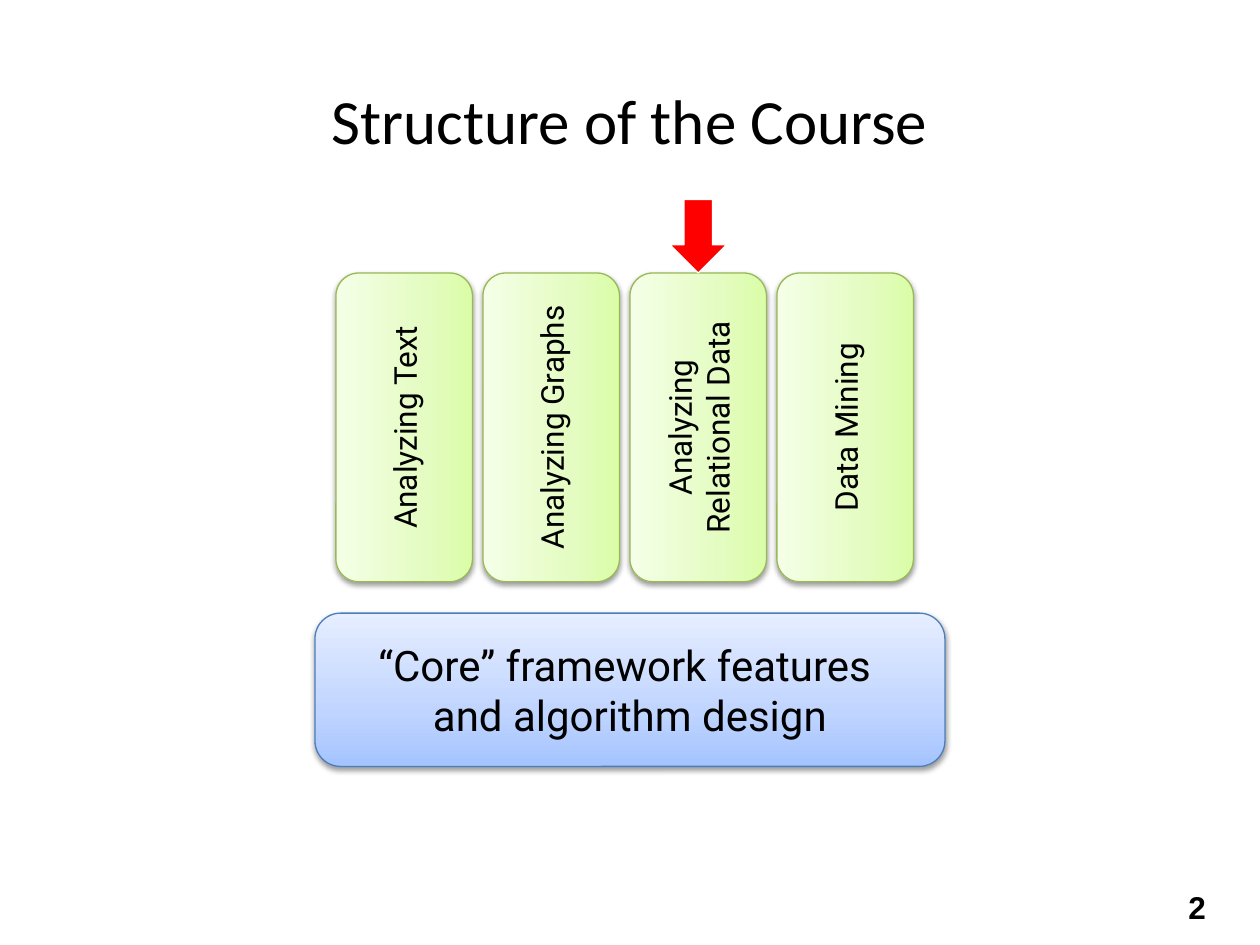
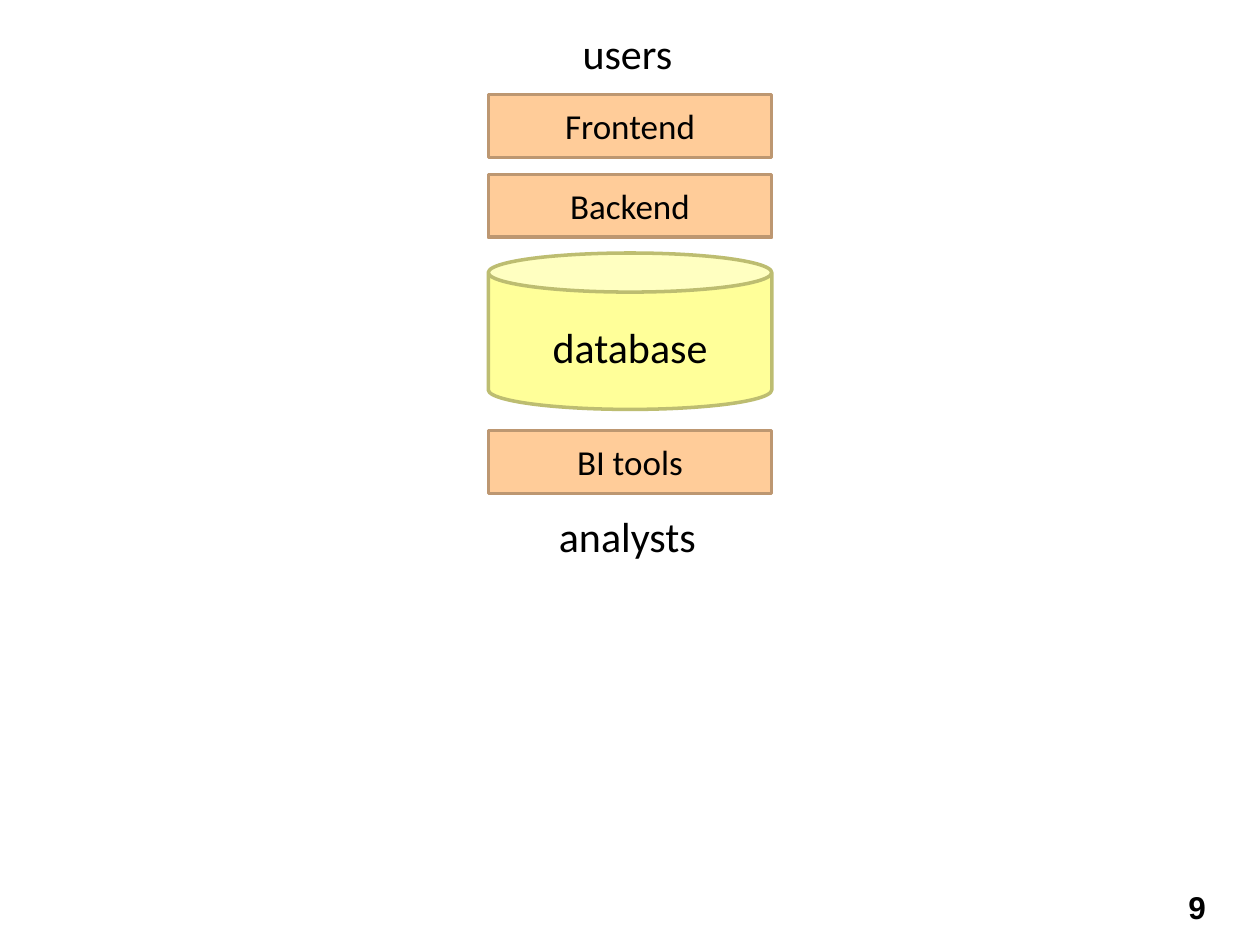
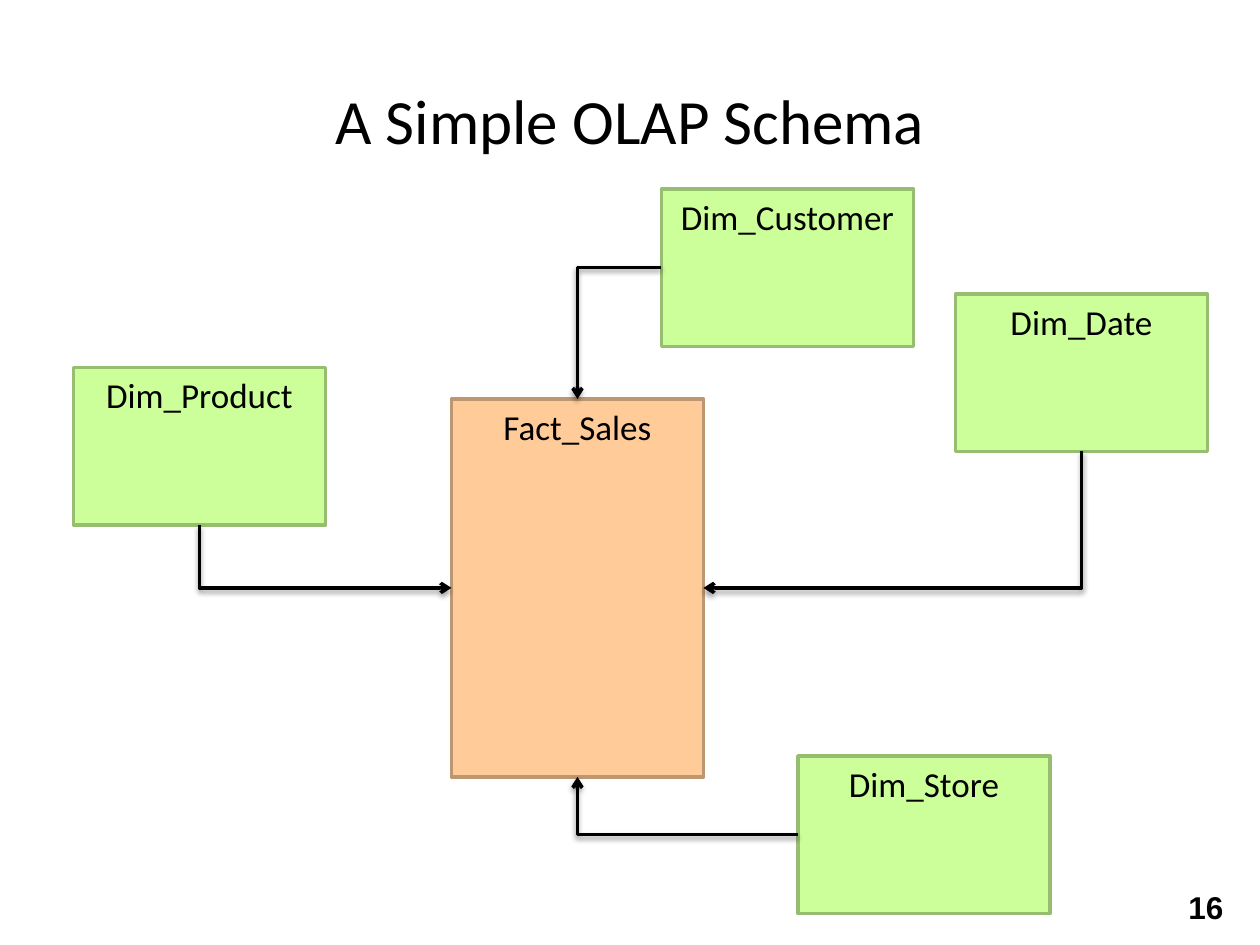
from lxml import etree
from pptx import Presentation
from pptx.dml.color import RGBColor
from pptx.enum.shapes import MSO_CONNECTOR, MSO_SHAPE
from pptx.enum.text import MSO_ANCHOR, PP_ALIGN
from pptx.oxml.ns import qn
from pptx.util import Pt

RECT, ROUND = MSO_SHAPE.RECTANGLE, MSO_SHAPE.ROUNDED_RECTANGLE
CAN, ARROW = MSO_SHAPE.CAN, MSO_SHAPE.DOWN_ARROW
ELBOW = MSO_CONNECTOR.ELBOW
TOP, MIDDLE = MSO_ANCHOR.TOP, MSO_ANCHOR.MIDDLE
LEFT, CENTER = PP_ALIGN.LEFT, PP_ALIGN.CENTER
NORTH, WEST, SOUTH, EAST = range(4)

SCALE = 7620
BLACK = "000000"
ORANGE = ("FFCC99", "BD9771")
YELLOW = ("FFFF99", "BDBD71")
GREEN = ("CCFF99", "97BD71")
RED = ("FF0000", "FFFFFF")
BLUE_FADE = (("A4C4FF", "BFD4FF", "E6EEFF"), "4B7EBC")
GREEN_FADE = (("DAFDA7", "E4FCC2", "F5FFE7"), "98B955")
STOPS = (0, 35000, 100000)

TITLE = {"name": "Calibri", "size": Pt(36)}
LABEL = {"name": "Calibri", "size": Pt(24)}
BOX = {"name": "Calibri", "size": Pt(20)}
CORE = {"name": "Roboto", "size": Pt(24)}
PILLAR = {"name": "Roboto", "size": Pt(18)}
NUMBER = {"name": "Arial", "size": Pt(18), "bold": True}


def px(*sizes):
    """Turn px lengths into EMU."""
    return [size * SCALE for size in sizes]


def color(code):
    """Turn a hex string into a colour."""
    return RGBColor.from_string(code)


def assign(item, values):
    """Set attributes from a dict."""
    for key, value in values.items():
        setattr(item, key, value)


def write(shape, text, style, align=CENTER, anchor=TOP):
    """Put styled text into a shape."""
    frame = shape.text_frame
    frame.text = text
    assign(frame, {"word_wrap": True, "vertical_anchor": anchor})
    for para in frame.paragraphs:
        para.alignment = align
        for run in para.runs:
            assign(run.font, style)
            run.font.color.rgb = color(BLACK)


def label(slide, area, text, style, align=CENTER):
    """Add a text box."""
    write(slide.shapes.add_textbox(*px(*area)), text, style, align)


def outline(shape, code, width):
    """Set the line of a shape or connector."""
    shape.line.color.rgb = color(code)
    shape.line.width = Pt(width)


def shade(shape, soft):
    """Replace the theme shadow by a soft one or by none."""
    effects = etree.SubElement(shape._element.spPr, qn("a:effectLst"))
    if soft:
        cast = etree.SubElement(effects, qn("a:outerShdw"), blurRad="40000",
                                dist="20000", dir="5400000", rotWithShape="0")
        tone = etree.SubElement(cast, qn("a:srgbClr"), val=BLACK)
        etree.SubElement(tone, qn("a:alpha"), val="38000")


def fade(shape, codes):
    """Fill a shape with a gradient that rises from its bottom."""
    shape.fill.gradient()
    shape.fill.gradient_angle = 90
    stops = shape._element.spPr.find(".//" + qn("a:gsLst"))
    stops.clear()
    for pos, code in zip(STOPS, codes):
        stop = etree.SubElement(stops, qn("a:gs"), pos=str(pos))
        etree.SubElement(stop, qn("a:srgbClr"), val=code)


def block(slide, kind, area, paint, width=2):
    """Add a flat filled shape."""
    shape = slide.shapes.add_shape(kind, *px(*area))
    shape.fill.solid()
    shape.fill.fore_color.rgb = color(paint[0])
    outline(shape, paint[1], width)
    shade(shape, False)
    return shape


def box(slide, area, text, paint, anchor=TOP):
    """Add a flat box with its name."""
    shape = block(slide, RECT, area, paint)
    write(shape, text, BOX, anchor=anchor)
    return shape


def panel(slide, area, text, paint, style, turn=0):
    """Add a rounded gradient panel with a shadow."""
    shape = slide.shapes.add_shape(ROUND, *px(*area))
    shape.rotation = turn
    fade(shape, paint[0])
    outline(shape, paint[1], 0.75)
    shade(shape, True)
    write(shape, text, style, anchor=MIDDLE)


def link(slide, start, exit, end, entry, tip):
    """Join two boxes by one bend, level part first."""
    wire = slide.shapes.add_connector(ELBOW, 0, 0, 0, 0)
    wire.begin_connect(start, exit)
    wire.end_connect(end, entry)
    wire._element.spPr.find(qn("a:prstGeom")).set("prst", "bentConnector2")
    outline(wire, BLACK, 2)
    etree.SubElement(wire.line._get_or_add_ln(), qn(tip), type="arrow")
    shade(wire, True)


def page(deck, number, title=None):
    """Add a slide with its number and title."""
    slide = deck.slides.add_slide(deck.slide_layouts[6])
    if title:
        label(slide, (0, 72, 1200, 90), title, TITLE)
    label(slide, (1120, 840, 70, 48), number, NUMBER, LEFT)
    return slide


def course(deck):
    """Draw the course pillars on their base."""
    slide = page(deck, "2", "Structure of the Course")
    panel(slide, (300, 584, 600, 146),
          "“Core” framework features \vand algorithm design", BLUE_FADE, CORE)
    topics = ("Analyzing Text", "Analyzing Graphs",
              "Analyzing Relational Data", "Data Mining")
    for i, topic in enumerate(topics):
        panel(slide, (238 + 140 * i, 342, 294, 130), topic,
              GREEN_FADE, PILLAR, 270)
    block(slide, ARROW, (638, 190, 54, 70), RED, 0.75)


def stack(deck):
    """Draw the layers between users and analysts."""
    slide = page(deck, "9")
    for top, name in ((90, "Frontend"), (166, "Backend"), (410, "BI tools")):
        box(slide, (465, top, 270, 60), name, ORANGE, MIDDLE)
    block(slide, CAN, (465, 241, 270, 149), YELLOW)
    label(slide, (465, 300, 270, 60), "database", LABEL)
    for top, name in ((20, "users"), (480, "analysts")):
        label(slide, (465, top, 265, 60), name, LABEL)


def schema(deck):
    """Draw the fact table and its dimensions."""
    slide = page(deck, "16", "A Simple OLAP Schema")
    spots = {"Customer": (630, 180), "Date": (910, 280),
             "Product": (70, 350), "Store": (760, 720)}
    dims = {name: box(slide, (*spot, 240, 150), "Dim_" + name, GREEN)
            for name, spot in spots.items()}
    fact = box(slide, (430, 380, 240, 360), "Fact_Sales", ORANGE)
    for name, side in (("Product", WEST), ("Date", EAST)):
        link(slide, fact, side, dims[name], SOUTH, "a:headEnd")
    for name, side in (("Store", SOUTH), ("Customer", NORTH)):
        link(slide, dims[name], WEST, fact, side, "a:tailEnd")


def main():
    """Build and save the deck."""
    deck = Presentation()
    deck.slide_width, deck.slide_height = px(1200, 900)
    course(deck)
    stack(deck)
    schema(deck)
    deck.save("out.pptx")


if __name__ == "__main__":
    main()
